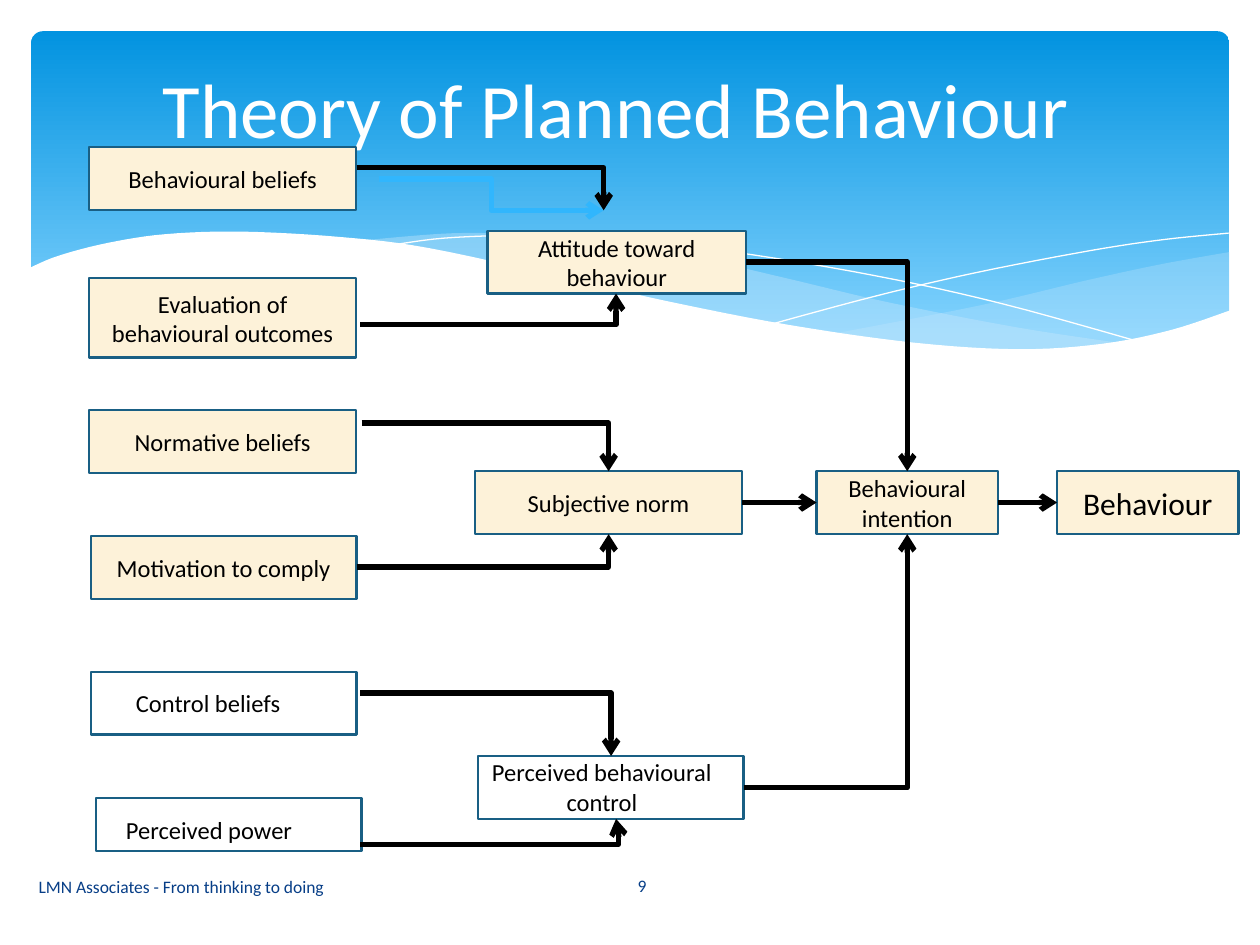
from dataclasses import dataclass

from lxml.etree import SubElement
from pptx import Presentation
from pptx.dml.color import RGBColor as Rgb
from pptx.enum.shapes import MSO_CONNECTOR as Link, MSO_SHAPE as Shape
from pptx.enum.text import MSO_ANCHOR as Anchor, PP_ALIGN as Align
from pptx.oxml.ns import qn
from pptx.util import Cm, Pt


@dataclass(frozen=True)
class Theme:
    font: str = "Calibri"
    band_top: str = "0293E0"
    band_bottom: str = "83D3FE"
    wave: str = "C6E7FC"
    white: str = "FFFFFF"
    black: str = "000000"
    cream: str = "FDF2D9"
    border: str = "195F84"
    accent: str = "31B6FD"
    footer: str = "073E87"
    title_size: int = 44
    result_size: int = 18
    label_size: int = 14
    footer_size: int = 10


theme = Theme()


def smooth(knots, steps=6):
    padded = [knots[0], *knots, knots[-1]]
    points = [knots[0]]
    for before, start, end, after in zip(padded, padded[1:], padded[2:], padded[3:]):
        for step in range(1, steps + 1):
            t = step / steps
            points.append(tuple(
                (2 * b + (c - a) * t + (2 * a - 5 * b + 4 * c - d) * t ** 2
                 + (3 * b - a - 3 * c + d) * t ** 3) / 2
                for a, b, c, d in zip(before, start, end, after)))
    return points


def write(frame, text, size, color, align, anchor=Anchor.MIDDLE):
    frame.word_wrap = True
    frame.vertical_anchor = anchor
    para = frame.paragraphs[0]
    para.alignment = align
    span = para.add_run()
    span.text = text
    span.font.name = theme.font
    span.font.size = Pt(size)
    span.font.color.rgb = Rgb.from_string(color)


deck = Presentation()
deck.slide_width, deck.slide_height = Cm(25.4), Cm(19.05)
page = deck.slides.add_slide(deck.slide_layouts[5])
shapes = page.shapes

band = shapes.add_shape(Shape.ROUNDED_RECTANGLE, Cm(0.63), Cm(0.63), Cm(24.15), Cm(6.86))
band.adjustments[0] = 0.034
band.shadow.inherit = False
band.line.fill.background()
band.fill.gradient()
band.fill.gradient_angle = 270
for stop, position, color in zip(band.fill.gradient_stops, (0, 0.9),
                                 (theme.band_top, theme.band_bottom)):
    stop.position = position
    stop.color.rgb = Rgb.from_string(color)

right_wave = [
    smooth([(24.79, 5.08), (23.39, 5.33), (21.87, 5.66), (19.79, 6.15), (16.79, 6.73)]),
    smooth([(16.79, 6.73), (17.91, 6.88), (19.23, 7.01), (20.68, 7.06), (22.15, 6.96),
            (23.57, 6.68), (24.79, 6.27)]),
]
middle_wave = [
    smooth([(22.68, 6.93), (20.5, 6.6), (17.93, 6.1), (15.98, 5.64), (14.1, 5.21),
            (12.42, 4.93), (10.67, 4.75), (9.17, 4.7), (7.26, 4.85)]),
    smooth([(7.26, 4.85), (9.19, 5.16), (11.4, 5.64), (13.46, 6.1), (15.7, 6.55),
            (17.65, 6.86), (19.63, 7.04), (21.29, 7.06), (22.68, 6.93)]),
]
falling_line = [smooth([(7.85, 4.95), (8.97, 4.8), (10.57, 4.75), (12.42, 4.83),
                        (14.78, 5.08), (17.65, 5.56), (20.19, 6.12), (23.04, 6.91)])]
rising_line = [smooth([(15.57, 6.53), (17.65, 5.97), (19.71, 5.49), (22, 5.05),
                       (23.47, 4.83), (24.77, 4.7)])]
white_wave = [
    smooth([(24.82, 6.25), (23.62, 6.65), (22.23, 6.93), (20.55, 7.04), (18.44, 6.91),
            (15.9, 6.55), (13.44, 6.07), (11.35, 5.59), (8.64, 5), (6.88, 4.78),
            (4.9, 4.67), (3.35, 4.72), (2.16, 4.9), (1.17, 5.16), (0.58, 5.41)]),
    [(0.58, 8.36), (24.82, 8.36)],
]

for edges, color, opacity in [
    (right_wave, theme.wave, 29),
    (middle_wave, theme.wave, 40),
    (falling_line, None, None),
    (rising_line, None, None),
    (white_wave, theme.white, 100),
]:
    points = [(Cm(x), Cm(y)) for edge in edges for x, y in edge]
    builder = shapes.build_freeform(*points[0])
    builder.add_line_segments(points[1:], close=color is not None)
    curve = builder.convert_to_shape()
    curve.shadow.inherit = False
    if color:
        curve.line.fill.background()
        curve.fill.solid()
        curve.fill.fore_color.rgb = Rgb.from_string(color)
        if opacity < 100:
            tint = curve.element.spPr.find(qn("a:solidFill")).find(qn("a:srgbClr"))
            SubElement(tint, qn("a:alpha")).set("val", str(opacity * 1000))
    else:
        curve.fill.background()
        curve.line.color.rgb = Rgb.from_string(theme.white)
        curve.line.width = Pt(0)

title = shapes.title
title.element.getparent().append(title.element)
title.left, title.top, title.width, title.height = Cm(0.99), Cm(0.43), Cm(22.86), Cm(3.48)
write(title.text_frame, "Theory of Planned Behaviour", theme.title_size, theme.white,
      Align.CENTER)

for text, left, top, width, height, size, fill in [
    ("Behavioural beliefs", 1.8, 2.97, 5.38, 1.27, theme.label_size, theme.cream),
    ("Evaluation of behavioural outcomes", 1.8, 5.61, 5.38, 1.6, theme.label_size, theme.cream),
    ("Normative beliefs", 1.8, 8.26, 5.38, 1.27, theme.label_size, theme.cream),
    ("Motivation to comply", 1.83, 10.8, 5.36, 1.27, theme.label_size, theme.cream),
    ("Attitude toward behaviour", 9.83, 4.65, 5.21, 1.27, theme.label_size, theme.cream),
    ("Subjective norm", 9.58, 9.5, 5.38, 1.27, theme.label_size, theme.cream),
    ("Behavioural intention", 16.46, 9.5, 3.66, 1.27, theme.label_size, theme.cream),
    ("Behaviour", 21.31, 9.5, 3.66, 1.27, theme.result_size, theme.cream),
    (None, 1.83, 13.54, 5.36, 1.27, None, None),
    (None, 1.93, 16.08, 5.36, 1.07, None, None),
    (None, 9.63, 15.24, 5.36, 1.27, None, None),
]:
    box = shapes.add_shape(Shape.RECTANGLE, Cm(left), Cm(top), Cm(width), Cm(height))
    box.shadow.inherit = False
    box.line.color.rgb = Rgb.from_string(theme.border)
    box.line.width = Pt(1.25)
    if fill:
        box.fill.solid()
        box.fill.fore_color.rgb = Rgb.from_string(fill)
        write(box.text_frame, text, size, theme.black, Align.CENTER)
    else:
        box.fill.background()

for x1, y1, x2, y2, bend, color in [
    (7.29, 8.53, 12.27, 9.5, None, theme.black),
    (7.65, 3.61, 12.17, 4.24, 0.5, theme.accent),
    (7.26, 13.97, 12.32, 15.24, None, theme.black),
    (7.26, 6.55, 12.42, 5.92, None, theme.black),
    (7.19, 11.43, 12.27, 10.77, None, theme.black),
    (7.26, 17.02, 12.42, 16.51, 1.01, theme.black),
    (15.04, 5.28, 18.29, 9.5, None, theme.black),
    (14.99, 15.88, 18.29, 10.77, None, theme.black),
    (14.96, 10.13, 16.46, 10.13, None, theme.black),
    (20.12, 10.13, 21.31, 10.13, None, theme.black),
    (7.19, 3.38, 12.17, 4.24, None, theme.black),
]:
    kind = Link.STRAIGHT if y1 == y2 else Link.ELBOW
    arrow = shapes.add_connector(kind, Cm(x1), Cm(y1), Cm(x2), Cm(y2))
    arrow.line.color.rgb = Rgb.from_string(color)
    arrow.line.width = Pt(3)
    props = arrow.element.spPr
    geometry = props.find(qn("a:prstGeom"))
    if bend:
        guide = SubElement(geometry.find(qn("a:avLst")), qn("a:gd"))
        guide.set("name", "adj1")
        guide.set("fmla", f"val {round(bend * 100000)}")
    elif kind == Link.ELBOW:
        geometry.set("prst", "bentConnector2")
    SubElement(props.find(qn("a:ln")), qn("a:tailEnd")).set("type", "arrow")
    SubElement(props, qn("a:effectLst"))

for text, left, top, width, height, size, color, align, anchor in [
    ("Control beliefs", 2.49, 13.74, 3.91, 0.86, theme.label_size, theme.black,
     Align.LEFT, Anchor.TOP),
    ("Perceived power", 2.29, 16.31, 4.42, 0.86, theme.label_size, theme.black,
     Align.LEFT, Anchor.TOP),
    ("Perceived behavioural control", 9.58, 15.14, 5.11, 1.45, theme.label_size, theme.black,
     Align.CENTER, Anchor.TOP),
    ("LMN Associates - From thinking to doing", 0.53, 17.37, 10.52, 1.02, theme.footer_size,
     theme.footer, Align.LEFT, Anchor.MIDDLE),
    ("9", 11.33, 17.35, 3.23, 1.02, theme.footer_size, theme.footer,
     Align.CENTER, Anchor.MIDDLE),
]:
    label = shapes.add_textbox(Cm(left), Cm(top), Cm(width), Cm(height))
    write(label.text_frame, text, size, color, align, anchor)

deck.save("out.pptx")
